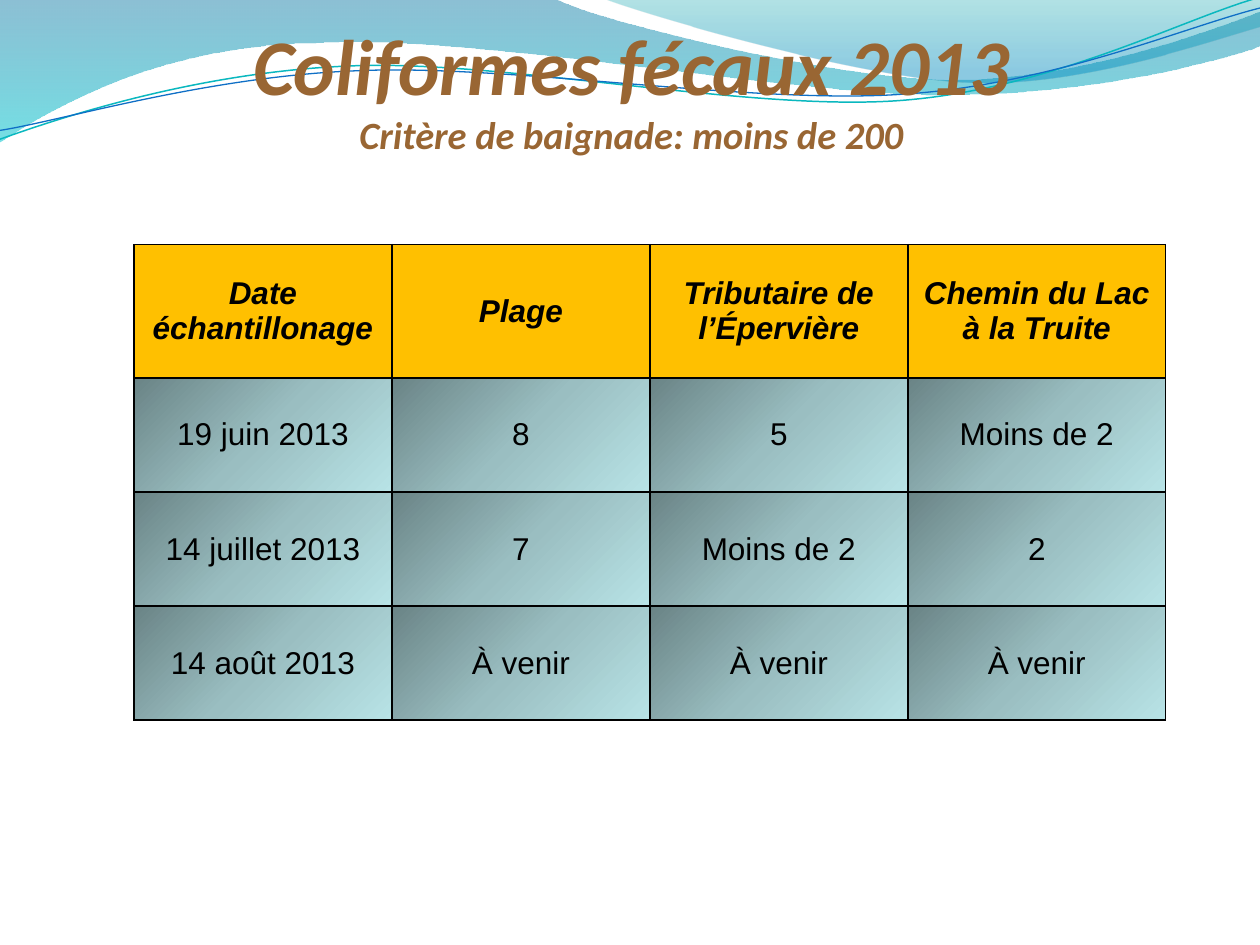
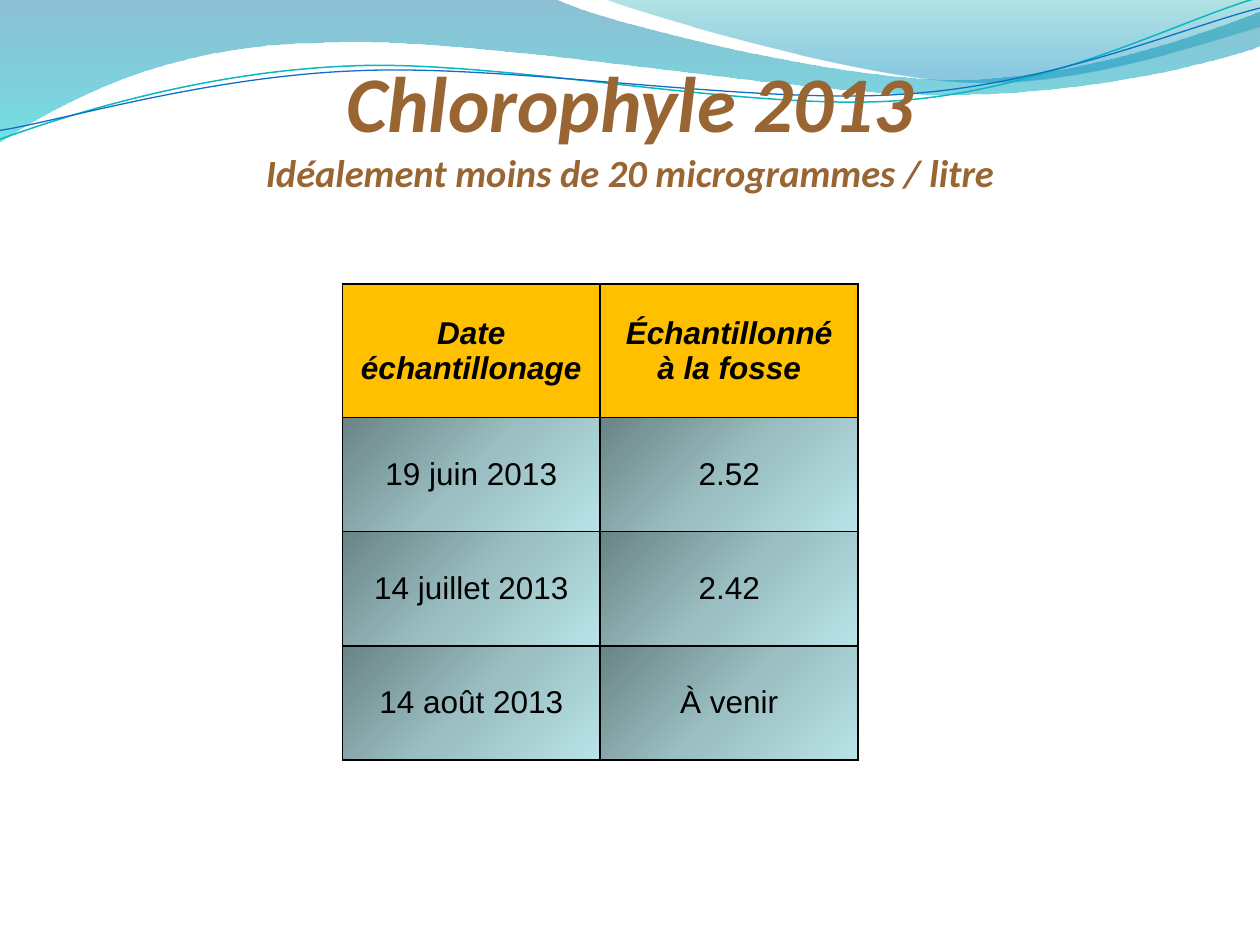
from lxml import etree
from pptx import Presentation
from pptx import util as u
from pptx.dml.color import RGBColor
from pptx.enum import text
from pptx.oxml import parse_xml
from pptx.oxml import ns

BROWN, GOLD, BLACK = "996633", "FFC000", "000000"
CELL_SHADES = [(0, "6A8486", 100), (50, "9ABEC1", 100), (100, "B8E3E6", 100)]
HUNDREDTH_INCH = u.Cm(2.54) / 100


def color(hex_code):
    return RGBColor.from_string(hex_code)


def add_gradient(properties, stops, angle):
    gradient = etree.SubElement(properties, ns.qn("a:gradFill"), rotWithShape="1")
    stop_list = etree.SubElement(gradient, ns.qn("a:gsLst"))
    for position, hex_code, opacity in stops:
        stop = etree.SubElement(stop_list, ns.qn("a:gs"), pos=str(position * 1000))
        shade = etree.SubElement(stop, ns.qn("a:srgbClr"), val=str(color(hex_code)))
        if opacity < 100:
            etree.SubElement(shade, ns.qn("a:alpha"), val=str(opacity * 1000))
    etree.SubElement(gradient, ns.qn("a:lin"), ang=str(angle * 60000), scaled="0")


waves = [
    {"start": (0, -1),
     "pieces": [[(440, -1)],
                [(476, 17), (664, 63), (758, 63)], [(853, 63), (958, 26), (1000, 9)],
                [(1001, 36)],
                [(983, 44), (870, 76), (746, 75)], [(622, 75), (382, 28), (257, 34)],
                [(129, 35), (46, 83), (-1, 113)],
                [(0, -1)]],
     "stops": [(0, "0074A1", 45), (100, "00C6CF", 55)]},
    {"start": (479, -1),
     "pieces": [[(509, 11), (682, 62), (769, 65)], [(856, 69), (961, 32), (1000, 21)],
                [(1000, 0)], [(479, -1)]],
     "stops": [(0, "00A1A9", 30), (80, "008BBF", 45)]},
    {"start": (-2, 87),
     "pieces": [[(47, 72), (158, 41), (278, 42)], [(396, 42), (591, 93), (712, 90)],
                [(832, 87), (940, 36), (1000, 22)]],
     "line": ("0AB8BF", 0.85)},
    {"start": (-2, 80),
     "pieces": [[(46, 75), (164, 45), (283, 46)], [(404, 46), (596, 88), (716, 85)],
                [(835, 83), (942, 42), (1002, 30)]],
     "line": ("0F6FC6", 0.75)},
]

pages = [
    {"title": "Coliformes fécaux 2013",
     "criterion": "Critère de baignade: moins de 200",
     "title_at": (1.3, 0),
     "table_at": (2.7, 4.93),
     "rows": [
         ["Date échantillonage", "Plage", "Tributaire de l’Épervière", "Chemin du Lac à la Truite"],
         ["19 juin 2013", "8", "5", "Moins de 2"],
         ["14 juillet 2013", "7", "Moins de 2", "2"],
         ["14 août 2013", "À venir", "À venir", "À venir"]]},
    {"title": "Chlorophyle 2013",
     "criterion": "Idéalement moins de 20 microgrammes / litre",
     "title_at": (1.27, 0.76),
     "table_at": (6.9, 5.73),
     "rows": [
         ["Date échantillonage", "Échantillonné\nà la fosse"],
         ["19 juin 2013", "2.52"],
         ["14 juillet 2013", "2.42"],
         ["14 août 2013", "À venir"]]},
]

prs = Presentation()
prs.slide_width, prs.slide_height = u.Cm(25.4), u.Cm(19.05)

for page in pages:
    slide = prs.slides.add_slide(prs.slide_layouts[6])

    for wave in waves:
        builder = slide.shapes.build_freeform(*wave["start"], HUNDREDTH_INCH)
        builder.add_line_segments(sum(wave["pieces"], []), close="stops" in wave)
        ribbon = builder.convert_to_shape()
        segments = iter(list(ribbon.element.spPr.iter(ns.qn("a:lnTo"))))
        for piece in wave["pieces"]:
            first, *others = [next(segments) for point in piece]
            if others:
                first.tag = ns.qn("a:cubicBezTo")
            for other in others:
                first.append(other[0])
                other.getparent().remove(other)
        if "stops" in wave:
            add_gradient(ribbon.element.spPr, wave["stops"], 90)
            ribbon.line.fill.background()
        else:
            hex_code, width = wave["line"]
            ribbon.fill.background()
            ribbon.line.color.rgb = color(hex_code)
            ribbon.line.width = u.Pt(width)
            ribbon.rotation = 357.3
        ribbon.shadow.inherit = False

    left, top = page["title_at"]
    heading = slide.shapes.add_textbox(u.Cm(left), u.Cm(top), u.Cm(22.86), u.Cm(3.17)).text_frame
    heading.word_wrap = True
    heading.vertical_anchor = text.MSO_ANCHOR.BOTTOM
    heading.margin_left = heading.margin_right = heading.margin_bottom = 0
    lines = heading.paragraphs[0]
    lines.alignment = text.PP_ALIGN.CENTER
    lines.font.name = "Calibri"
    lines.font.bold = lines.font.italic = True
    lines.font.color.rgb = color(BROWN)
    title = lines.add_run()
    title.text = page["title"]
    title.font.size = u.Pt(45)
    lines.add_line_break()
    criterion = lines.add_run()
    criterion.text = page["criterion"]
    criterion.font.size = u.Pt(22)

    rows = page["rows"]
    left, top = page["table_at"]
    samples = slide.shapes.add_table(len(rows), len(rows[0]), u.Cm(left), u.Cm(top),
                                     u.Cm(5.2 * len(rows[0])), u.Cm(9.59)).table
    samples.first_row = samples.horz_banding = False
    for column in samples.columns:
        column.width = u.Cm(5.2)
    for r, row in enumerate(rows):
        is_header = r == 0
        samples.rows[r].height = u.Cm(2.69 if is_header else 2.3)
        for c, value in enumerate(row):
            cell = samples.cell(r, c)
            cell.text = value
            cell.vertical_anchor = text.MSO_ANCHOR.MIDDLE
            properties = cell._tc.get_or_add_tcPr()
            for side in ("lnL", "lnR", "lnT", "lnB"):
                properties.append(parse_xml(
                    f'<a:{side} {ns.nsdecls("a")} w="{u.Pt(1)}"><a:solidFill>'
                    f'<a:srgbClr val="{color(BLACK)}"/></a:solidFill></a:{side}>'))
            if is_header:
                cell.fill.solid()
                cell.fill.fore_color.rgb = color(GOLD)
            else:
                add_gradient(properties, CELL_SHADES, 45)
            for paragraph in cell.text_frame.paragraphs:
                paragraph.alignment = text.PP_ALIGN.CENTER
                paragraph.font.name = "Arial"
                paragraph.font.size = u.Pt(18)
                paragraph.font.bold = paragraph.font.italic = is_header
                paragraph.font.color.rgb = color(BLACK)

prs.save("out.pptx")
